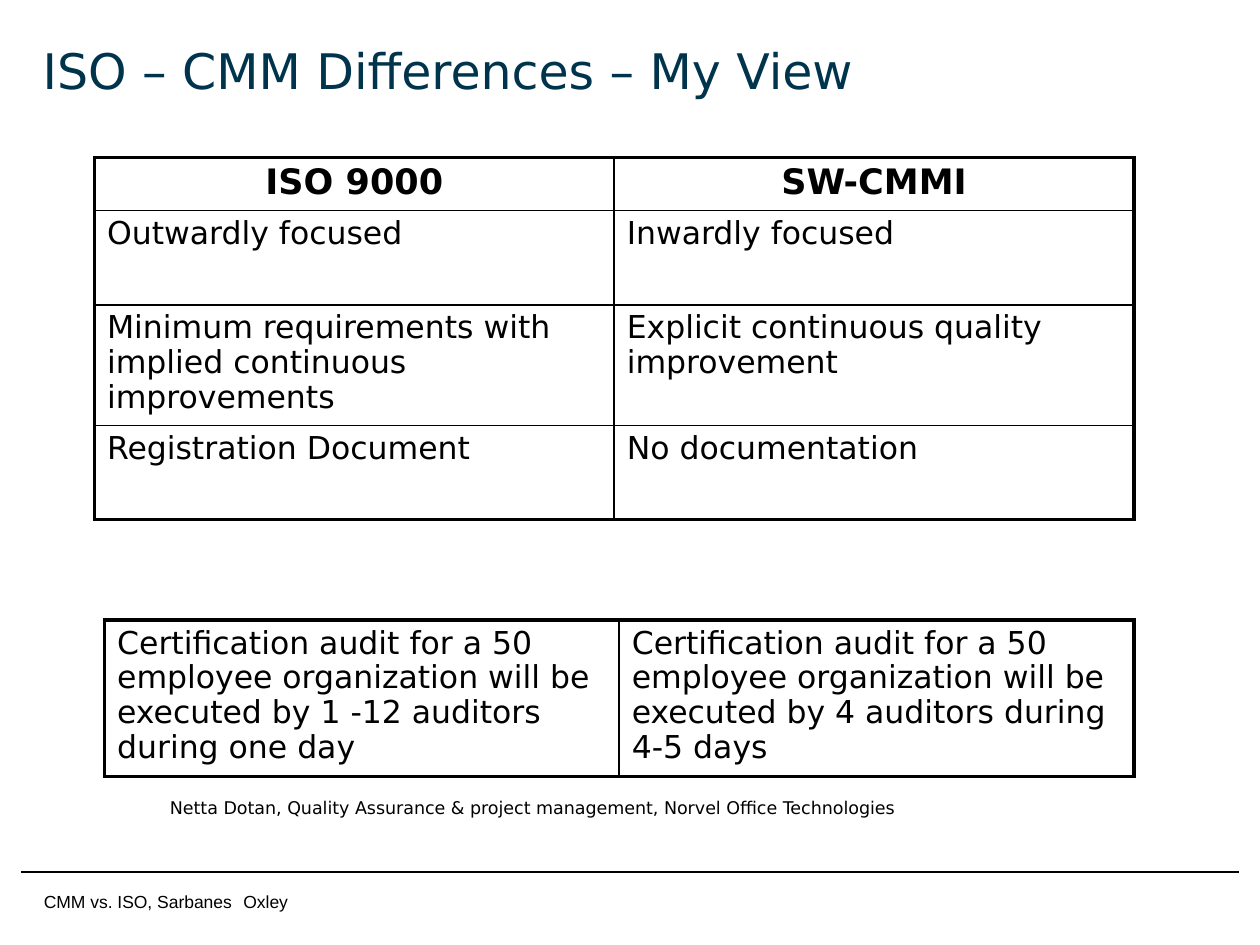
import pptx
import pptx.dml.color
import pptx.enum.shapes
import pptx.enum.text
import pptx.oxml
import pptx.oxml.ns
import pptx.util
from lxml import etree

FONT = "DejaVu Sans"
BLACK, NAVY = "000000", "00344D"
THICK, THIN = 2.25, 1
LINE_SPACING = 0.95

TITLE = "ISO – CMM Differences – My View"
COMPARISON = [
    ("ISO 9000", "SW-CMMI"),
    ("Outwardly focused", "Inwardly focused"),
    ("Minimum requirements with implied continuous improvements",
     "Explicit continuous quality improvement"),
    ("Registration Document", "No documentation"),
]
AUDITS = [
    ("Certification audit for a 50 employee organization will be executed by 1 -12 auditors during one day",
     "Certification audit for a 50 employee organization will be executed by 4 auditors during 4-5 days"),
]
CREDIT = "Netta Dotan, Quality Assurance & project management, Norvel Office Technologies"
FOOTER = [("CMM vs. ISO, Sarbanes", 10), (" ", 24), ("Oxley", 10)]

inches = pptx.util.Inches


def rgb(value):
    return pptx.dml.color.RGBColor.from_string(value)


def style(run, size, color=BLACK, font=FONT, bold=False):
    run.font.size = pptx.util.Pt(size)
    run.font.name = font
    run.font.bold = bold
    run.font.color.rgb = rgb(color)


def add_text(slide, box, runs, color=BLACK, font=FONT, wrap=False):
    """Add one paragraph made of (text, size) runs; return its text frame."""
    frame = slide.shapes.add_textbox(*map(inches, box)).text_frame
    frame.word_wrap = wrap
    for text, size in runs:
        run = frame.paragraphs[0].add_run()
        run.text = text
        style(run, size, color, font)
    return frame


def set_borders(cell, widths):
    """Draw black borders; widths are in the order left, right, top, bottom."""
    properties = cell._tc.get_or_add_tcPr()
    for position, (side, width) in enumerate(zip("LRTB", widths)):
        border = pptx.oxml.parse_xml(
            f'<a:ln{side} {pptx.oxml.ns.nsdecls("a")} w="{pptx.util.Pt(width)}">'
            f'<a:solidFill><a:srgbClr val="{BLACK}"/></a:solidFill></a:ln{side}>')
        properties.insert(position, border)


def add_framed_table(slide, box, rows, heights, header):
    """Add a table with a thick outer frame and thin inner lines."""
    last_row, last_column = len(rows) - 1, len(rows[0]) - 1
    table = slide.shapes.add_table(
        len(rows), len(rows[0]), *map(inches, box)).table
    table.first_row = table.horz_banding = False
    for row, height in zip(table.rows, heights):
        row.height = inches(height)
    for r, texts in enumerate(rows):
        for c, text in enumerate(texts):
            cell = table.cell(r, c)
            cell.text_frame.text = text
            cell.fill.background()
            is_header = header and r == 0
            paragraph = cell.text_frame.paragraphs[0]
            paragraph.line_spacing = LINE_SPACING
            if is_header:
                paragraph.alignment = pptx.enum.text.PP_ALIGN.CENTER
            style(paragraph.runs[0], 20 if is_header else 18, bold=is_header)
            on_edge = (c == 0, c == last_column, r == 0, r == last_row)
            set_borders(cell, [THICK if edge else THIN for edge in on_edge])


def add_rule(slide, left, right, y):
    rule = slide.shapes.add_connector(
        pptx.enum.shapes.MSO_CONNECTOR.STRAIGHT,
        *map(inches, (left, y, right, y)))
    rule.line.color.rgb = rgb(BLACK)
    rule.line.width = pptx.util.Pt(1.25)
    etree.SubElement(rule._element.spPr, pptx.oxml.ns.qn("a:effectLst"))


def main():
    deck = pptx.Presentation()
    deck.slide_width, deck.slide_height = inches(10), inches(7.5)
    slide = deck.slides.add_slide(deck.slide_layouts[6])

    add_text(slide, (0.25, 6.83, 2.14, 0.5), FOOTER, font="Arial")
    add_rule(slide, 0.17, 9.83, 6.92)

    title = add_text(slide, (0.24, 0.2, 9.26, 0.75), [(TITLE, 28)], NAVY, wrap=True)
    title.vertical_anchor = pptx.enum.text.MSO_ANCHOR.MIDDLE
    title.paragraphs[0].line_spacing = LINE_SPACING

    add_framed_table(slide, (0.75, 1.25, 8.25, 2.9), COMPARISON,
                     [0.42, 0.75, 0.93, 0.75], header=True)
    add_framed_table(slide, (0.83, 4.92, 8.17, 1.2), AUDITS, [1.2], header=False)
    add_text(slide, (1.25, 6.28, 6.05, 0.27), [(CREDIT, 10)])

    deck.save("out.pptx")


if __name__ == "__main__":
    main()
